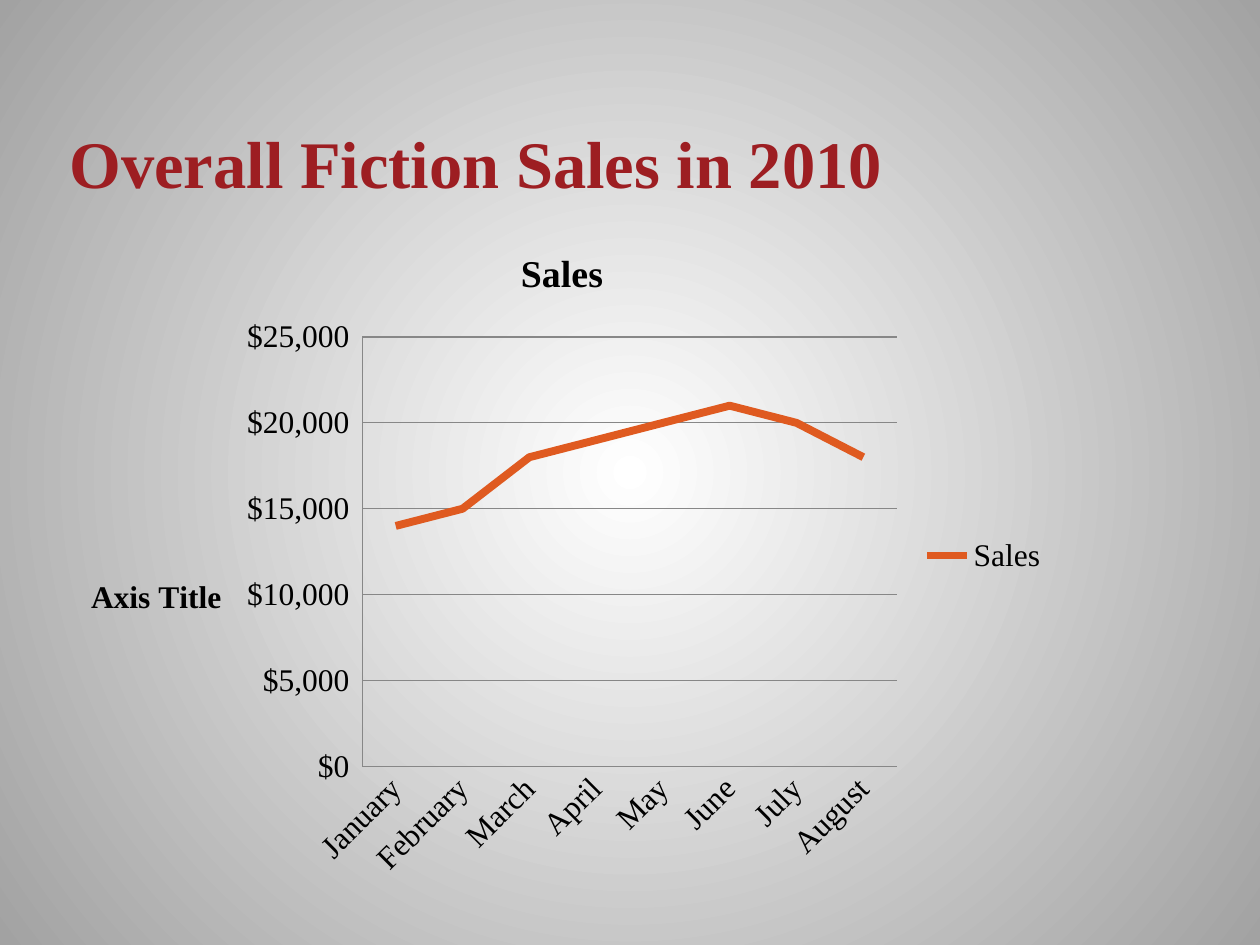
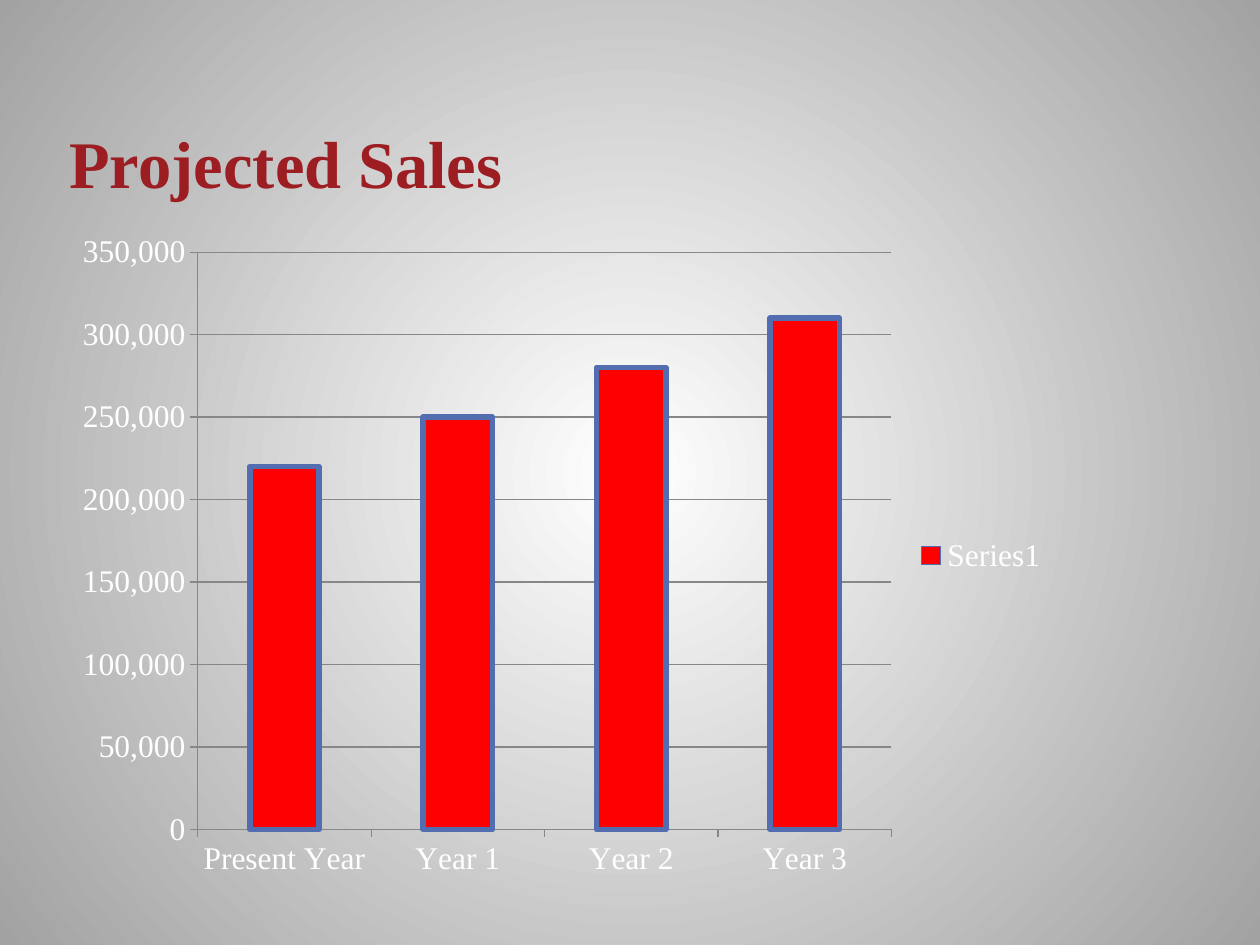
from dataclasses import dataclass

from lxml.etree import SubElement
from pptx import Presentation
from pptx.chart.data import CategoryChartData
from pptx.dml.color import RGBColor
from pptx.enum.chart import XL_CHART_TYPE, XL_LEGEND_POSITION, XL_TICK_MARK
from pptx.enum.text import MSO_ANCHOR
from pptx.oxml.ns import qn
from pptx.util import Cm, Pt


@dataclass(frozen=True)
class Theme:
    font: str = "Times New Roman"
    title_color: RGBColor = RGBColor(0x9D, 0x1E, 0x22)
    glow: RGBColor = RGBColor(0xFF, 0xFF, 0xFF)
    edge: RGBColor = RGBColor(0xA2, 0xA2, 0xA2)
    axis: RGBColor = RGBColor(0x87, 0x87, 0x87)
    black: RGBColor = RGBColor(0, 0, 0)
    white: RGBColor = RGBColor(0xFF, 0xFF, 0xFF)
    sales_line: RGBColor = RGBColor(0xDF, 0x5A, 0x20)
    bar_fill: RGBColor = RGBColor(0xFF, 0, 0)
    bar_outline: RGBColor = RGBColor(0x52, 0x6D, 0xB0)
    title_size: Pt = Pt(38)
    chart_title_size: Pt = Pt(21.6)
    chart_size: Pt = Pt(18)


class Deck:
    left = Cm(1.27)
    width = Cm(20.12)

    def __init__(self, theme):
        self.theme = theme
        self.presentation = Presentation()
        self.presentation.slide_width = Cm(25.4)
        self.presentation.slide_height = Cm(19.05)
        self.slide = None

    def add_slide(self, title):
        layout = self.presentation.slide_layouts[6]
        self.slide = self.presentation.slides.add_slide(layout)
        self.paint_background()
        self.add_title(title)

    def paint_background(self):
        """Fill the slide with a gradient that spreads from its centre."""
        fill = self.slide.background.fill
        fill.gradient()
        for stop, color in zip(fill.gradient_stops, (self.theme.glow, self.theme.edge)):
            stop.color.rgb = color
        gradient = self.slide.background._cSld.find(".//" + qn("a:gradFill"))
        gradient.remove(gradient.find(qn("a:lin")))
        circle = SubElement(gradient, qn("a:path"), path="circle")
        SubElement(circle, qn("a:fillToRect"), l="50000", t="50000", r="50000", b="50000")

    def add_title(self, text):
        box = self.slide.shapes.add_textbox(self.left, Cm(0.89), self.width, Cm(3.18))
        frame = box.text_frame
        frame.word_wrap = True
        frame.vertical_anchor = MSO_ANCHOR.BOTTOM
        frame.margin_left = frame.margin_right = Cm(0.13)
        frame.margin_top = frame.margin_bottom = 0
        paragraph = frame.paragraphs[0]
        paragraph.text = text
        self.set_font(paragraph.font, self.theme.title_size, self.theme.title_color, True)

    def set_font(self, font, size, color, bold=False):
        font.name = self.theme.font
        font.size = size
        font.color.rgb = color
        font.bold = bold

    def add_chart(self, kind, series_name, values, number_format, text_color, tick_mark):
        """Draw one series, given as a mapping from category to value."""
        data = CategoryChartData(number_format=number_format)
        data.categories = list(values)
        data.add_series(series_name, list(values.values()))
        frame = self.slide.shapes.add_chart(
            kind, self.left, Cm(4.47), self.width, Cm(13.46), data)
        chart = frame.chart
        chart.has_title = False
        self.set_font(chart.font, self.theme.chart_size, text_color)
        chart.has_legend = True
        chart.legend.position = XL_LEGEND_POSITION.RIGHT
        chart.legend.include_in_layout = False
        for axis in (chart.category_axis, chart.value_axis):
            axis.major_tick_mark = tick_mark
            axis.minor_tick_mark = XL_TICK_MARK.NONE
            self.set_line(axis.format.line, self.theme.axis, Pt(0.75))
        chart.value_axis.has_major_gridlines = True
        self.set_line(chart.value_axis.major_gridlines.format.line, self.theme.axis, Pt(0.75))
        chart.value_axis.tick_labels.number_format = number_format
        chart.value_axis.tick_labels.number_format_is_linked = False
        return chart

    def set_line(self, line, color, width):
        line.color.rgb = color
        line.width = width

    def add_chart_heading(self, owner, text, size):
        """Title a chart or an axis, with level text."""
        owner.has_title = True
        title = owner.chart_title if hasattr(owner, "chart_title") else owner.axis_title
        frame = title.text_frame
        frame.text = text
        frame._txBody.find(qn("a:bodyPr")).set("rot", "0")
        self.set_font(frame.paragraphs[0].font, size, self.theme.black, True)


def add_fiction_sales(deck):
    theme = deck.theme
    deck.add_slide("Overall Fiction Sales in 2010")
    monthly_sales = {
        "January": 14000, "February": 15000, "March": 18000, "April": 19000,
        "May": 20000, "June": 21000, "July": 20000, "August": 18000,
    }
    chart = deck.add_chart(
        XL_CHART_TYPE.LINE_STACKED, "Sales", monthly_sales,
        '"$"#,##0_);[Red]\\("$"#,##0\\)', theme.black, XL_TICK_MARK.NONE)
    deck.add_chart_heading(chart, "Sales", theme.chart_title_size)
    deck.add_chart_heading(chart.value_axis, "Axis Title", theme.chart_size)
    series = chart.plots[0].series[0]
    series.smooth = False
    deck.set_line(series.format.line, theme.sales_line, Pt(4.5))


def add_projected_sales(deck):
    theme = deck.theme
    deck.add_slide("Projected Sales")
    yearly_sales = {
        "Present Year": 220000, "Year 1": 250000, "Year 2": 280000, "Year 3": 310000,
    }
    chart = deck.add_chart(
        XL_CHART_TYPE.COLUMN_CLUSTERED, "Series1", yearly_sales,
        "#,##0", theme.white, XL_TICK_MARK.OUTSIDE)
    plot = chart.plots[0]
    plot.gap_width = 150
    plot.vary_by_categories = False
    bars = plot.series[0].format
    bars.fill.solid()
    bars.fill.fore_color.rgb = theme.bar_fill
    deck.set_line(bars.line, theme.bar_outline, Pt(3.15))


def main():
    deck = Deck(Theme())
    add_fiction_sales(deck)
    add_projected_sales(deck)
    deck.presentation.save("out.pptx")


if __name__ == "__main__":
    main()
